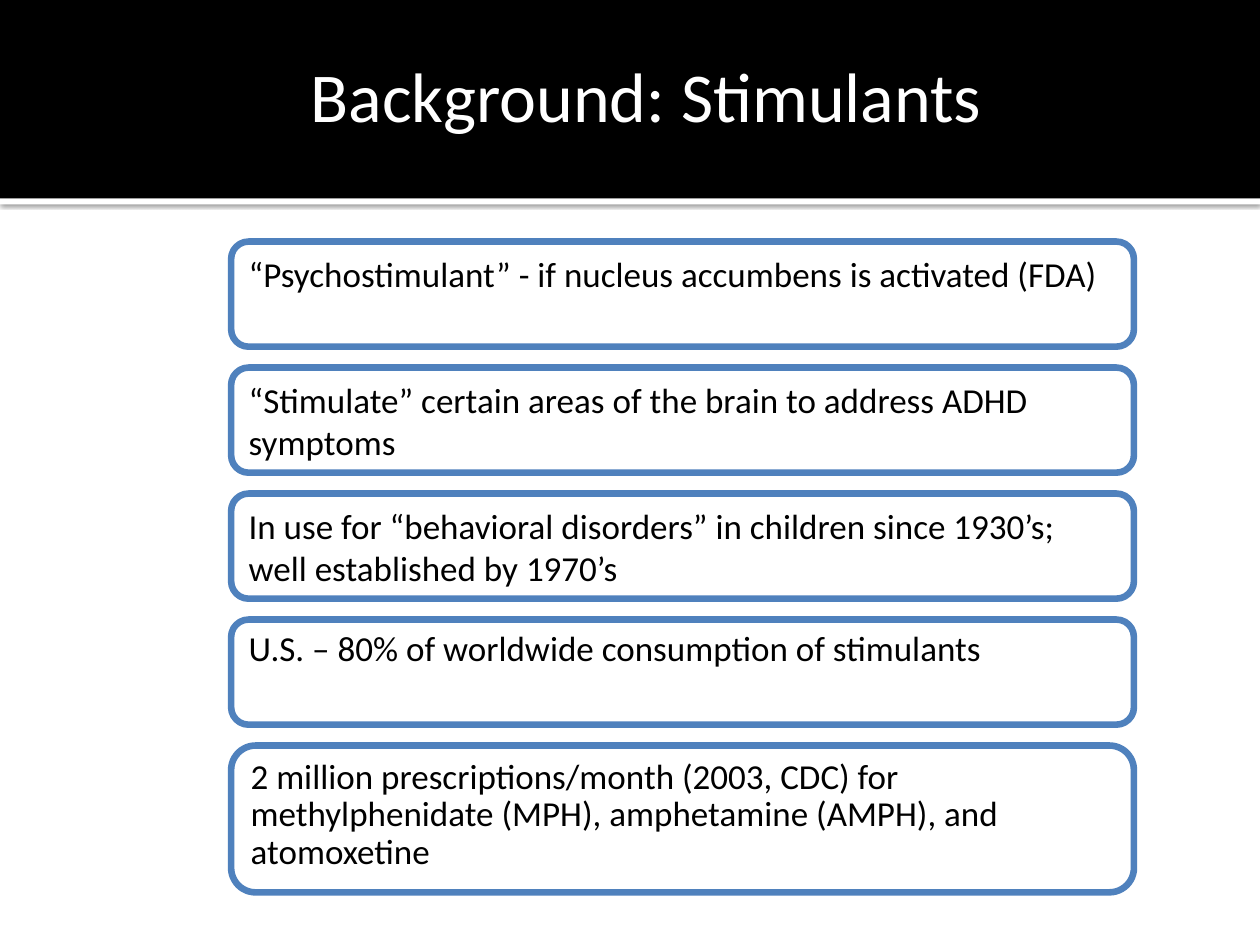
"""Build the slide on the background of stimulants."""
from lxml.etree import SubElement
from pptx import Presentation
from pptx.dml.color import RGBColor as RGB
from pptx.enum.shapes import MSO_SHAPE as SHAPE
from pptx.enum.text import MSO_ANCHOR as ANCHOR, PP_ALIGN as ALIGN
from pptx.oxml.ns import qn
from pptx.util import Cm, Pt

BLACK = RGB(0x00, 0x00, 0x00)
WHITE = RGB(0xFF, 0xFF, 0xFF)
BLUE = RGB(0x4F, 0x81, 0xBD)

FACTS = [
    ("“Psychostimulant” - if nucleus accumbens is activated (FDA)", 2.12, 1),
    ("“Stimulate” certain areas of the brain to address ADHD symptoms", 2.12, 1),
    ("In use for “behavioral disorders” in children since 1930’s; "
     "well established by 1970’s", 2.12, 1),
    ("U.S. – 80% of worldwide consumption of stimulants", 2.12, 0.9),
    ("2 million prescriptions/month (2003, CDC) for methylphenidate (MPH), "
     "amphetamine (AMPH), and atomoxetine", 2.96, 0.9),
]


def add_box(kind, left, top, width, height, fill):
    box = slide.shapes.add_shape(kind, Cm(left), Cm(top), Cm(width), Cm(height))
    box.shadow.inherit = False
    box.fill.solid()
    box.fill.fore_color.rgb = fill
    box.line.fill.background()
    return box


def set_font(para, size, color):
    para.font.name = "Calibri"
    para.font.size = Pt(size)
    para.font.color.rgb = color


deck = Presentation()
deck.slide_width, deck.slide_height = Cm(25.4), Cm(19.05)
slide = deck.slides.add_slide(deck.slide_layouts[5])

strip = add_box(SHAPE.RECTANGLE, 0, 4, 25.4, 0.12, WHITE)
effects = strip.element.spPr.find(qn("a:effectLst"))
shade = SubElement(effects, qn("a:outerShdw"), blurRad=str(Pt(2.5)),
                   dist=str(Pt(0.8)), dir="5400000", rotWithShape="0")
tint = SubElement(shade, qn("a:srgbClr"), val=str(BLACK))
SubElement(tint, qn("a:alpha"), val="60000")
add_box(SHAPE.RECTANGLE, 0, 0, 25.4, 4, BLACK)

title = slide.shapes.title
slide.shapes.element.append(title.element)
title.left, title.top, title.width, title.height = Cm(0.42), Cm(0), Cm(23.94), Cm(3.8)
frame = title.text_frame
frame.text = "Background: Stimulants"
frame.vertical_anchor = ANCHOR.MIDDLE
frame.margin_left = Cm(1.52)
head = frame.paragraphs[0]
head.alignment = ALIGN.CENTER
set_font(head, 40, WHITE)

for row, (text, height, space) in enumerate(FACTS):
    box = add_box(SHAPE.ROUNDED_RECTANGLE, 4.66, 4.87 + 2.54 * row, 18.2, height, WHITE)
    tint = box.element.spPr.find(qn("a:solidFill"))[0]
    SubElement(tint, qn("a:alpha"), val="90000")
    box.line.color.rgb = BLUE
    box.line.width = Pt(3.78)
    frame = box.text_frame
    frame.text = text
    frame.word_wrap = True
    frame.vertical_anchor = ANCHOR.TOP
    para = frame.paragraphs[0]
    para.alignment = ALIGN.LEFT
    para.line_spacing = space
    set_font(para, 20, BLACK)

deck.save("out.pptx")
